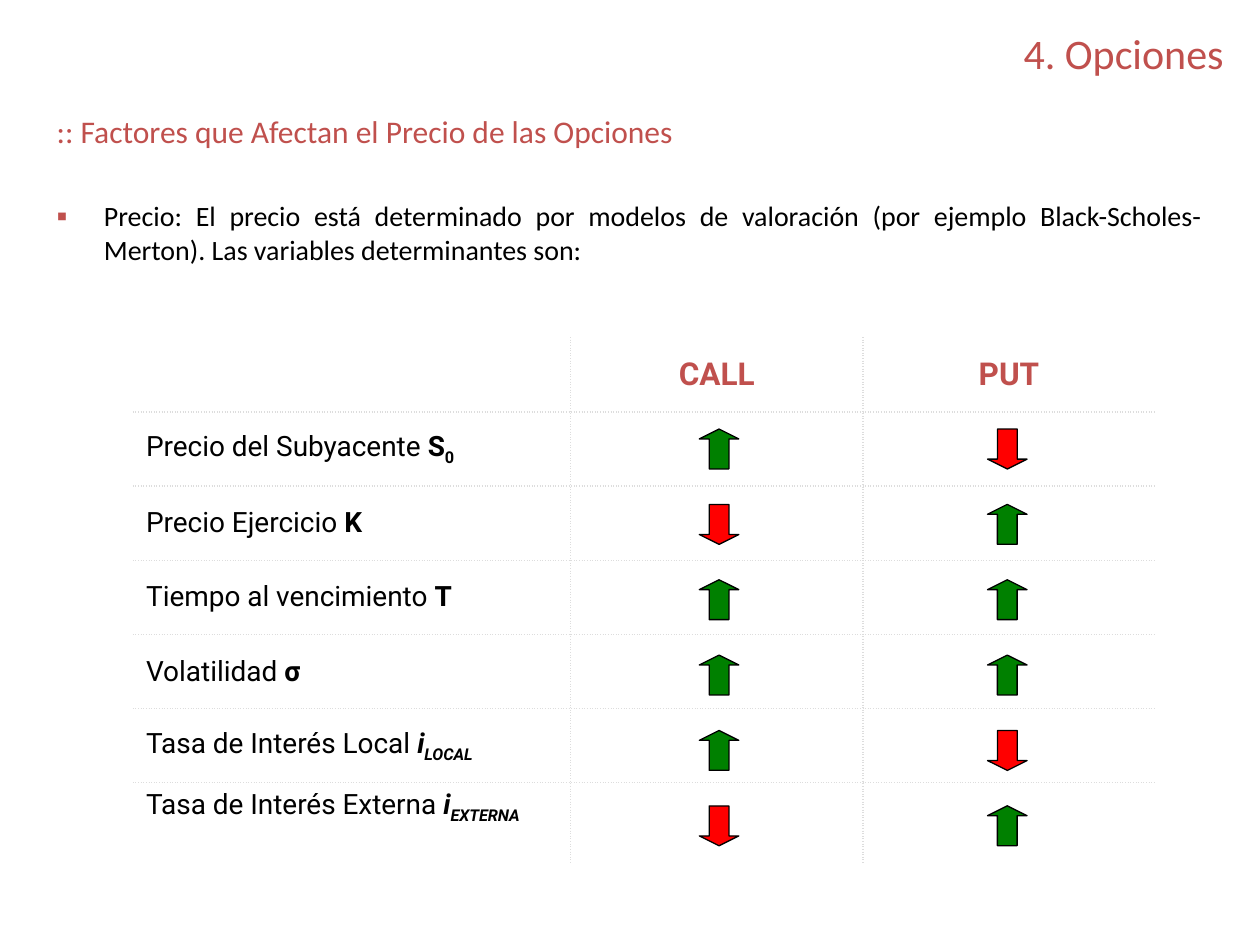
from lxml.etree import SubElement
from pptx import Presentation
from pptx.dml.color import RGBColor
from pptx.enum.shapes import MSO_SHAPE as Shape
from pptx.enum.text import MSO_ANCHOR as Anchor, PP_ALIGN as Align
from pptx.oxml.ns import qn
from pptx.util import Pt

ACCENT = RGBColor(0xC0, 0x50, 0x4D)
BLACK = RGBColor(0, 0, 0)
GREEN = RGBColor(0, 0x80, 0)
RED = RGBColor(0xFF, 0, 0)
GRID = RGBColor(0xDD, 0xDD, 0xDD)


def add_text(paragraph, text, font="Calibri", size=16, color=BLACK,
             bold=False, italic=False, subscript=False):
    run = paragraph.add_run()
    run.text = text
    run.font.name = font
    run.font.size = Pt(size)
    run.font.color.rgb = color
    run.font.bold = bold
    run.font.italic = italic
    if subscript:
        run.font._element.set("baseline", "-25000")


def add_border(cell, side):
    line = SubElement(cell._tc.get_or_add_tcPr(), qn(f"a:{side}"), w=str(Pt(1)))
    fill = SubElement(line, qn("a:solidFill"))
    SubElement(fill, qn("a:srgbClr"), val=str(GRID))
    SubElement(line, qn("a:prstDash"), val="sysDot")


presentation = Presentation()
presentation.slide_width, presentation.slide_height = Pt(720), Pt(540)
slide = presentation.slides.add_slide(presentation.slide_layouts[1])

# Title
title = slide.shapes.title
title.left, title.top, title.width, title.height = Pt(235.5), Pt(11.5), Pt(471), Pt(37.5)
title.text_frame.vertical_anchor = Anchor.MIDDLE
paragraph = title.text_frame.paragraphs[0]
paragraph.alignment = Align.RIGHT
add_text(paragraph, "4. Opciones", size=24, color=ACCENT)

# Subtitle and bullet
body = slide.placeholders[1]
body.left, body.top, body.width, body.height = Pt(25.2), Pt(60.5), Pt(669), Pt(100)
subtitle = body.text_frame.paragraphs[0]
bullet = body.text_frame.add_paragraph()
add_text(subtitle, ":: Factores que Afectan el Precio de las Opciones", size=18, color=ACCENT)
add_text(bullet, "Precio: El precio está determinado por modelos de valoración "
         "(por ejemplo Black-Scholes-Merton). Las variables determinantes son:")
for paragraph, space in ((subtitle, 0), (bullet, 28)):
    paragraph.alignment = Align.JUSTIFY
    paragraph.space_before = Pt(space)
    properties = paragraph._p.get_or_add_pPr()
    properties.set("marL", str(Pt(27)))
    properties.set("indent", str(Pt(-27)))
SubElement(subtitle._p.pPr, qn("a:buNone"))
bullet_color = SubElement(bullet._p.pPr, qn("a:buClr"))
SubElement(bullet_color, qn("a:srgbClr"), val=str(ACCENT))
SubElement(bullet._p.pPr, qn("a:buSzPct"), val="110000")
SubElement(bullet._p.pPr, qn("a:buChar"), char="▪")

# Factors: label, symbol, subscript, italic symbol, does CALL rise, does PUT rise
factors = [
    ("Precio del Subyacente ", "S", "0", False, True, False),
    ("Precio Ejercicio ", "K", "", False, False, True),
    ("Tiempo al vencimiento ", "T", "", False, True, True),
    ("Volatilidad ", "σ", "", False, True, True),
    ("Tasa de Interés Local ", "i", "LOCAL", True, True, False),
    ("Tasa de Interés Externa ", "i", "EXTERNA", True, False, True),
]

# Table grid
row_count, column_count = len(factors) + 1, 3
table = slide.shapes.add_table(row_count, column_count, Pt(76.3), Pt(193),
                               Pt(583.8), Pt(301.3)).table
table.first_row = table.horz_banding = False
for column, width in zip(table.columns, (249.8, 167, 167)):
    column.width = Pt(width)
for row in table.rows:
    row.height = Pt(42.4)
table.rows[row_count - 1].height = Pt(46.9)

# Inner borders only
for row in range(row_count):
    for column in range(column_count):
        cell = table.cell(row, column)
        cell.vertical_anchor = Anchor.MIDDLE
        inner_sides = (("lnL", column > 0), ("lnR", column < column_count - 1),
                       ("lnT", row > 0), ("lnB", row < row_count - 1))
        for side, is_inner in inner_sides:
            if is_inner:
                add_border(cell, side)
        cell.fill.background()

# Table headings
for column, heading in enumerate(("CALL", "PUT"), start=1):
    paragraph = table.cell(0, column).text_frame.paragraphs[0]
    paragraph.alignment = Align.CENTER
    add_text(paragraph, heading, font="Roboto", size=18, color=ACCENT, bold=True)

# Factor labels and arrows
for index, (label, symbol, suffix, italic, *rises) in enumerate(factors):
    paragraph = table.cell(index + 1, 0).text_frame.paragraphs[0]
    add_text(paragraph, label, font="Roboto")
    add_text(paragraph, symbol, font="Roboto", bold=True, italic=italic)
    if suffix:
        add_text(paragraph, suffix, font="Roboto", bold=True, italic=italic, subscript=True)
    for left, rising in zip((399.6, 564.3), rises):
        arrow = slide.shapes.add_shape(Shape.UP_ARROW, Pt(left), Pt(245.2 + 43.06 * index),
                                       Pt(22.6), Pt(22.8))
        arrow.shadow.inherit = False
        arrow.adjustments[1] = 0.25
        arrow.rotation = 0 if rising else 180
        arrow.fill.solid()
        arrow.fill.fore_color.rgb = GREEN if rising else RED
        arrow.line.color.rgb = BLACK
        arrow.line.width = Pt(0.75)
table.cell(row_count - 1, 0).vertical_anchor = Anchor.TOP

presentation.save("out.pptx")
